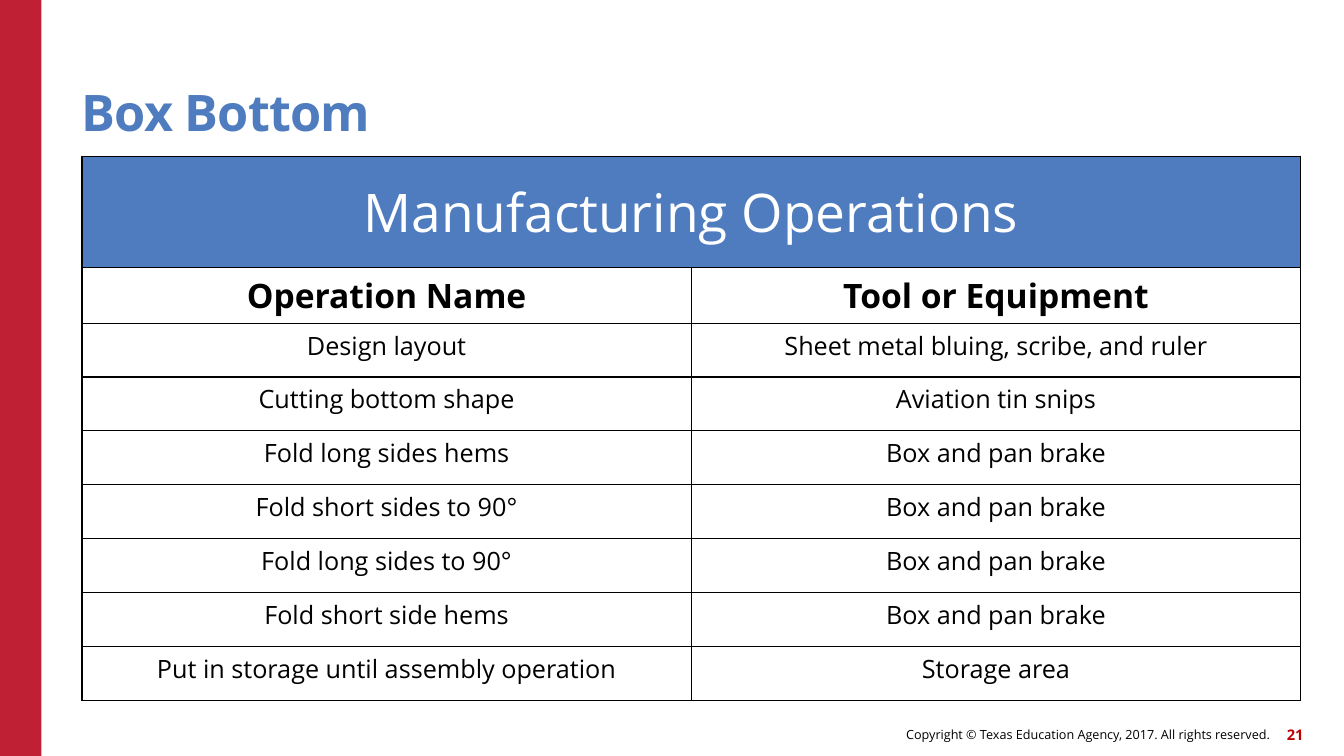
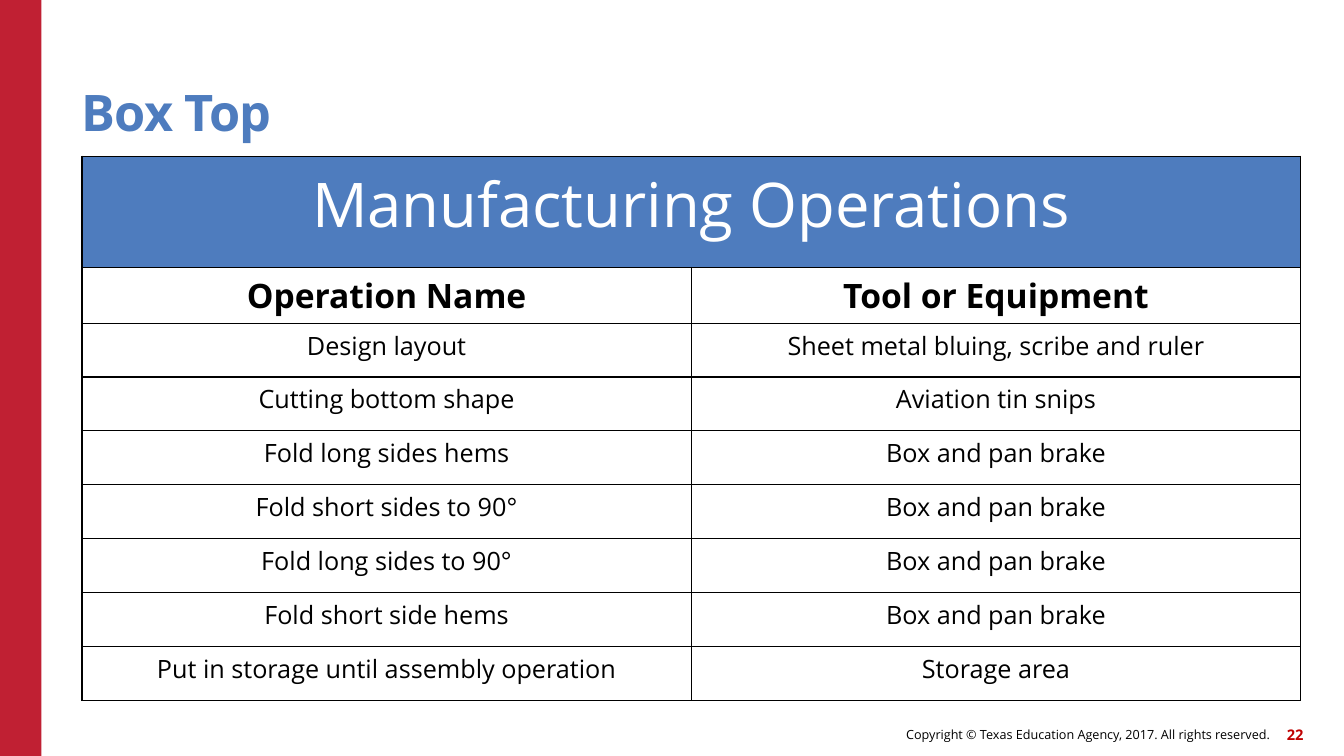
import pptx
import pptx.util
import pptx.dml.color
import pptx.enum.shapes
import pptx.enum.text
import pptx.oxml
import pptx.oxml.ns

Pt = pptx.util.Pt
RGB = pptx.dml.color.RGBColor
ALIGN = pptx.enum.text.PP_ALIGN
ANCHOR = pptx.enum.text.MSO_ANCHOR

FONT = "Open Sans"
RED = RGB(0xC0, 0x20, 0x33)
DARK = RGB(0xC0, 0x00, 0x00)
BLUE = RGB(0x4E, 0x7C, 0xBE)
BLACK = RGB(0, 0, 0)
WHITE = RGB(255, 255, 255)

LEFT = 58.5
COL = 435.3
TALL = [79.2, 40] + [38.5] * 7
EDGE = (
    '<a:{} {} w="12700"><a:solidFill><a:srgbClr val="{}"/></a:solidFill></a:{}>'
)


def write(frame, text, size, color=BLACK, bold=False, align=ALIGN.CENTER,
          space=None, line=None):
    """Set the one paragraph of a text frame, with its format."""
    para = frame.paragraphs[0]
    para.alignment = align
    if line:
        para.line_spacing = line
    run = para.add_run()
    run.text = text
    run.font.name = FONT
    run.font.size = Pt(size)
    run.font.bold = bold
    run.font.color.rgb = color
    if space:
        run.font._element.set("spc", str(space))


def label(slide, text, box, anchor=ANCHOR.MIDDLE, **style):
    """Add a text box without insets."""
    frame = slide.shapes.add_textbox(*map(Pt, box)).text_frame
    frame.word_wrap = True
    frame.vertical_anchor = anchor
    frame.margin_left = frame.margin_right = 0
    frame.margin_top = frame.margin_bottom = 0
    write(frame, text, **style)


STEPS = [
    ("Cutting bottom shape", "Aviation tin snips"),
    ("Fold long sides hems", "Box and pan brake"),
    ("Fold short sides to 90°", "Box and pan brake"),
    ("Fold long sides to 90°", "Box and pan brake"),
    ("Fold short side hems", "Box and pan brake"),
    ("Put in storage until assembly operation", "Storage area"),
]
# title, page, banner size, banner anchor, layout tools
PAGES = [
    ("Box Bottom", 21, 38, ANCHOR.MIDDLE,
     "Sheet metal bluing, scribe, and ruler"),
    ("Box Top", 22, 44, ANCHOR.TOP,
     "Sheet metal bluing, scribe and ruler"),
]

deck = pptx.Presentation()
deck.slide_width = Pt(960)
deck.slide_height = Pt(540)

for title, page, size, anchor, tools in PAGES:
    slide = deck.slides.add_slide(deck.slide_layouts[6])

    band = slide.shapes.add_shape(
        pptx.enum.shapes.MSO_SHAPE.RECTANGLE, 0, 0, Pt(29.5), Pt(540))
    band.shadow.inherit = False
    band.fill.solid()
    band.fill.fore_color.rgb = RED
    band.line.fill.background()

    label(slide, "Copyright © Texas Education Agency, 2017. All rights reserved.",
          (442, 512.8, 465, 23), size=9, align=ALIGN.RIGHT)
    label(slide, str(page), (900.7, 513.2, 30.3, 23), size=10.5, color=DARK,
          bold=True, align=ALIGN.RIGHT)
    label(slide, title, (LEFT, 32.4, 792, 69), anchor=ANCHOR.BOTTOM, size=36,
          color=BLUE, bold=True, align=ALIGN.LEFT, space=-60, line=0.9)

    rows = [
        ("Manufacturing Operations", ""),
        ("Operation Name", "Tool or Equipment"),
        ("Design layout", tools),
    ] + STEPS
    table = slide.shapes.add_table(
        len(rows), 2, Pt(LEFT), Pt(111.6), Pt(2 * COL), Pt(sum(TALL))).table
    table.first_row = table.horz_banding = False
    for col in table.columns:
        col.width = Pt(COL)
    table.cell(0, 0).merge(table.cell(0, 1))

    for r, row in enumerate(rows):
        table.rows[r].height = Pt(TALL[r])
        for c, text in enumerate(row):
            cell = table.cell(r, c)
            cell.margin_left = cell.margin_right = Pt(9.6)
            cell.margin_top = cell.margin_bottom = Pt(3.6)
            props = cell._tc.get_or_add_tcPr()
            for side in ("lnL", "lnR", "lnT", "lnB"):
                props.append(pptx.oxml.parse_xml(EDGE.format(
                    side, pptx.oxml.ns.nsdecls("a"), BLACK, side)))
            cell.fill.solid()
            cell.fill.fore_color.rgb = WHITE if r else BLUE
            if r == 0:
                cell.vertical_anchor = anchor
            if text:
                write(cell.text_frame, text,
                      size=(size, 24, 18)[min(r, 2)],
                      color=BLACK if r else WHITE, bold=r == 1)

deck.save("out.pptx")
